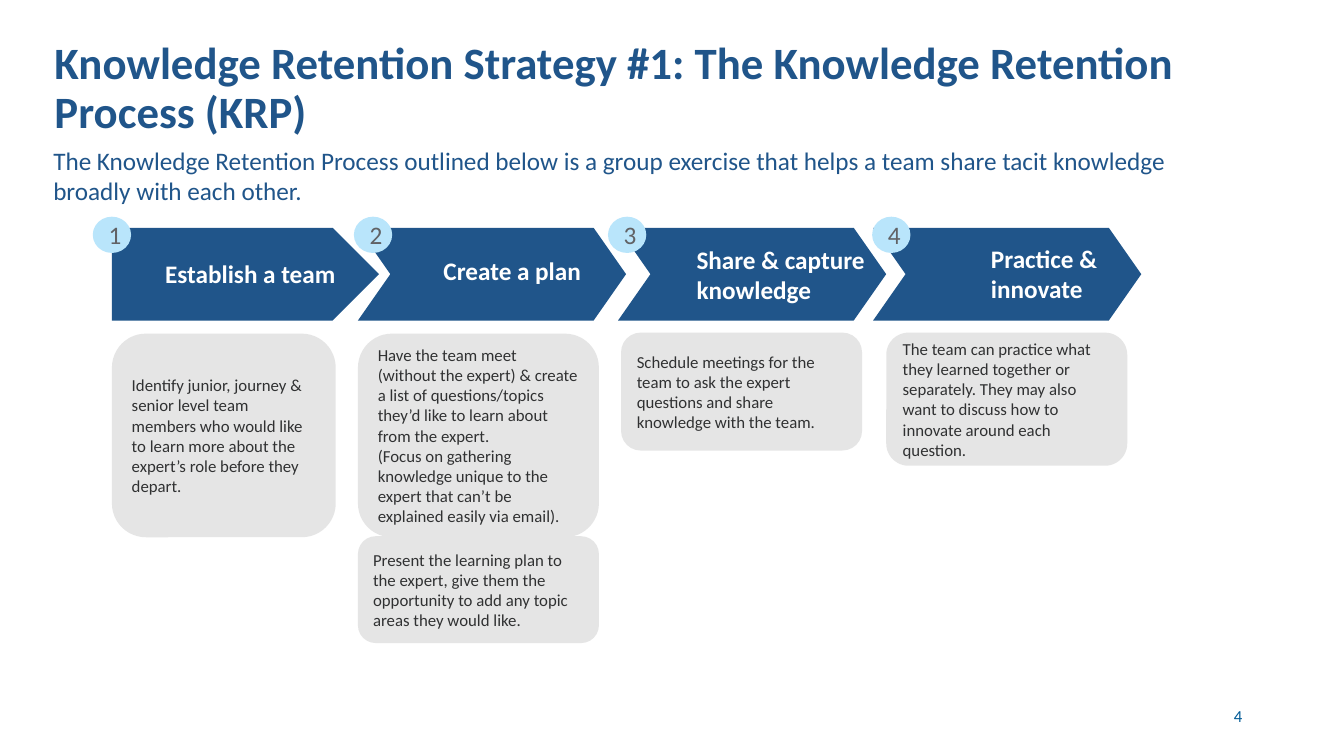
from pptx import Presentation
from pptx.dml.color import RGBColor
from pptx.enum.shapes import MSO_SHAPE
from pptx.enum.text import MSO_ANCHOR, MSO_AUTO_SIZE, PP_ALIGN
from pptx.util import Pt

EMU_PER_PX = 9144
BLUE, PALE, GREY, WHITE = "20558A", "B9E5FB", "E5E5E5", "FFFFFF"

TITLE = "Knowledge Retention Strategy #1: The Knowledge Retention Process (KRP)"
INTRO = ("The Knowledge Retention Process outlined below is a group exercise "
         "that helps a team share tacit knowledge broadly with each other.")
PAGE = "4"
ARROW_TOP, ARROW_HEIGHT = 226, 92
BADGE_TOP, BADGE_WIDTH, BADGE_HEIGHT = 215, 38, 36

STEPS = [
    {"heading": "Establish a team", "heading_box": (154, 251, 190, 40),
     "arrow": (111, 265), "badge": 92,
     "cards": [((111, 331, 222, 202),
                ["Identify junior, journey & senior level team members who would "
                 "like to learn more about the expert’s role before they depart."])]},
    {"heading": "Create a plan", "heading_box": (430, 248, 159, 40),
     "arrow": (355, 266), "badge": 351,
     "cards": [((355, 331, 239, 202),
                ["Have the team meet (without the expert) & create a list of "
                 "questions/topics they’d like to learn about from the expert.",
                 "(Focus on gathering knowledge unique to the expert that can’t "
                 "be explained easily via email)."]),
               ((355, 532, 239, 106),
                ["Present the learning plan to the expert, give them the "
                 "opportunity to add any topic areas they would like."])]},
    {"heading": "Share & capture knowledge", "heading_box": (681, 237, 189, 71),
     "arrow": (613, 266), "badge": 603,
     "cards": [((616, 330, 239, 117),
                ["Schedule meetings for the team to ask the expert questions "
                 "and share knowledge with the team."])]},
    {"heading": "Practice & innovate", "heading_box": (973, 236, 159, 71),
     "arrow": (866, 266), "badge": 865,
     "cards": [((879, 330, 239, 132),
                ["The team can practice what they learned together or separately. "
                 "They may also want to discuss how to innovate around each question."])]},
]


def px(length):
    """Turn pixels into EMU."""
    return length * EMU_PER_PX


def color(hex_code):
    """Return the colour for a hex string."""
    return RGBColor.from_string(hex_code)


def write(holder, paragraphs, size, ink, bold=False, align=PP_ALIGN.LEFT,
          anchor=MSO_ANCHOR.TOP):
    """Fill a shape with evenly formatted paragraphs."""
    frame = holder.text_frame
    frame.word_wrap = True
    frame.auto_size = MSO_AUTO_SIZE.NONE
    frame.vertical_anchor = anchor
    frame.text = "\n".join(paragraphs)
    for paragraph in frame.paragraphs:
        paragraph.alignment = align
        paragraph.font.name = "Calibri"
        paragraph.font.size = Pt(size)
        paragraph.font.bold = bold
        paragraph.font.color.rgb = color(ink)
    return frame


def add_label(slide, box, wording, size, ink, **style):
    """Add a text box."""
    label = slide.shapes.add_textbox(*map(px, box))
    write(label, [wording], size, ink, **style)


def add_block(slide, preset, box, fill):
    """Add a flat filled shape without outline."""
    block = slide.shapes.add_shape(preset, *map(px, box))
    block.shadow.inherit = False
    block.fill.solid()
    block.fill.fore_color.rgb = color(fill)
    block.line.fill.background()
    return block


def add_step(slide, number, step):
    """Draw one step: arrow, numbered badge, heading and cards."""
    left, width = step["arrow"]
    preset = MSO_SHAPE.PENTAGON if number == 1 else MSO_SHAPE.CHEVRON
    arrow = add_block(slide, preset, (left, ARROW_TOP, width, ARROW_HEIGHT), BLUE)
    arrow.adjustments[0] = 0.5 if number == 1 else 0.35

    badge = add_block(slide, MSO_SHAPE.OVAL,
                      (step["badge"], BADGE_TOP, BADGE_WIDTH, BADGE_HEIGHT), PALE)
    badge_frame = write(badge, [str(number)], 18, "616265",
                        align=PP_ALIGN.CENTER, anchor=MSO_ANCHOR.MIDDLE)
    badge_frame.margin_left = px(6)
    badge_frame.margin_right = badge_frame.margin_top = badge_frame.margin_bottom = 0

    add_label(slide, step["heading_box"], step["heading"], 18, WHITE, bold=True)
    for box, paragraphs in step["cards"]:
        card = add_block(slide, MSO_SHAPE.ROUNDED_RECTANGLE, box, GREY)
        write(card, paragraphs, 12, "303132", anchor=MSO_ANCHOR.MIDDLE)


def main():
    """Build and save the slide."""
    deck = Presentation()
    deck.slide_width, deck.slide_height = px(1333), px(750)
    slide = deck.slides.add_slide(deck.slide_layouts[5])

    title = slide.shapes.title
    title.left, title.top, title.width, title.height = map(px, (44, 15, 1246, 127))
    title_frame = write(title, [TITLE], 32, BLUE, bold=True, anchor=MSO_ANCHOR.BOTTOM)
    title_frame.paragraphs[0].line_spacing = 0.9

    add_label(slide, (43, 139, 1188, 71), INTRO, 18, BLUE)
    for number, step in enumerate(STEPS, 1):
        add_step(slide, number, step)
    add_label(slide, (942, 695, 300, 40), PAGE, 12, "005A96", align=PP_ALIGN.RIGHT)
    deck.save("out.pptx")


if __name__ == "__main__":
    main()
